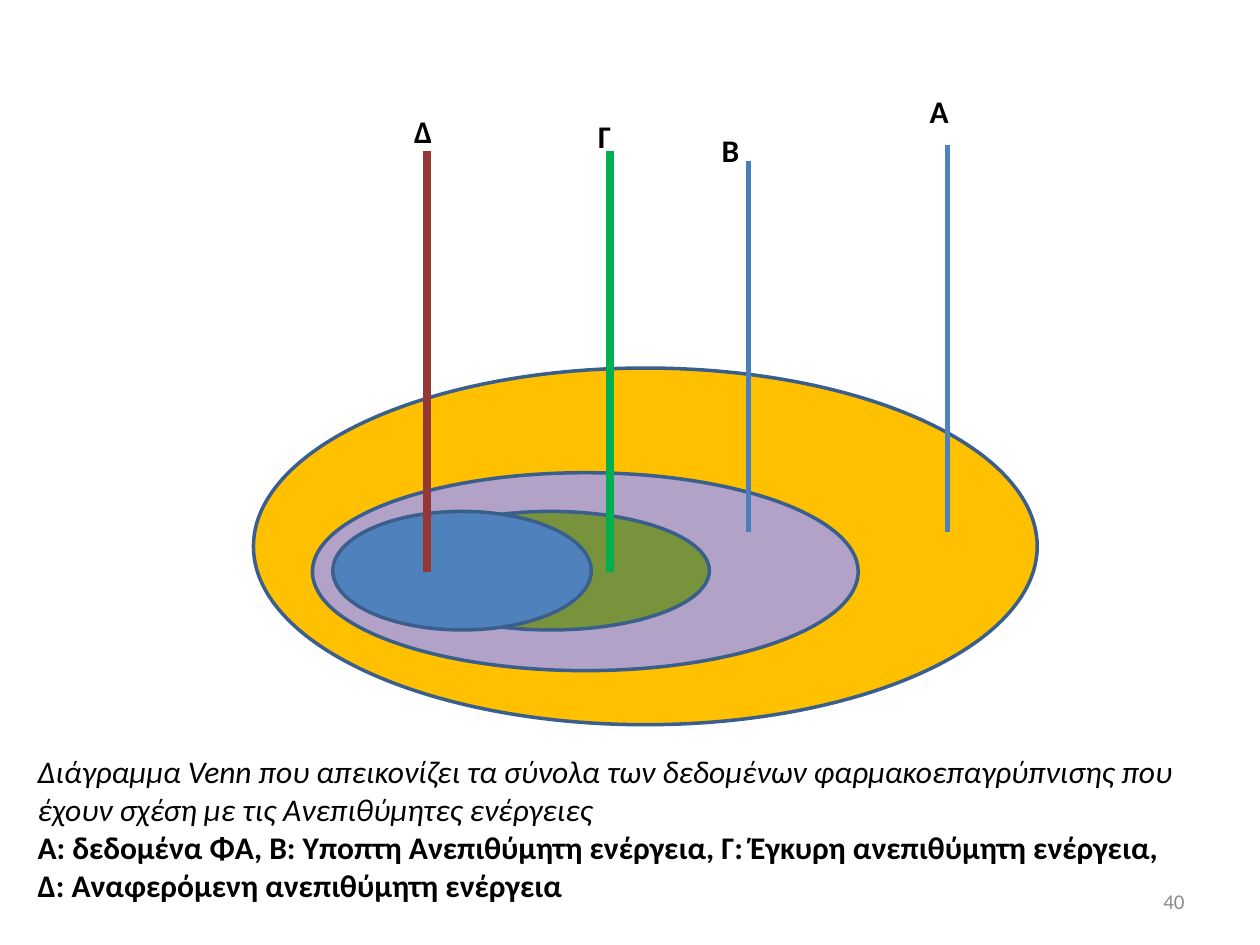
from lxml import etree
from pptx import Presentation
from pptx import util as u
from pptx.dml.color import RGBColor
from pptx.enum import shapes, text
from pptx.oxml import ns

OUTLINE = "3A5F8C"


def color(hex_string):
    return RGBColor.from_string(hex_string)


def add_text(slide, paragraphs, left, top, width, height, size=18, fill="000000",
             align=text.PP_ALIGN.LEFT, anchor=text.MSO_ANCHOR.TOP):
    """Add a text box; paragraphs is a list of (wording, bold, italic)."""
    frame = slide.shapes.add_textbox(u.Cm(left), u.Cm(top), u.Cm(width), u.Cm(height)).text_frame
    frame.word_wrap = True
    frame.vertical_anchor = anchor
    for index, (wording, bold, italic) in enumerate(paragraphs):
        paragraph = frame.add_paragraph() if index else frame.paragraphs[0]
        paragraph.alignment = align
        run = paragraph.add_run()
        run.text = wording
        run.font.name = "Calibri"
        run.font.size = u.Pt(size)
        run.font.bold = bold
        run.font.italic = italic
        run.font.color.rgb = color(fill)


presentation = Presentation()
presentation.slide_width = u.Cm(25.4)
presentation.slide_height = u.Cm(19.05)
slide = presentation.slides.add_slide(presentation.slide_layouts[6])

# Slide number
add_text(slide, [("40", False, False)], 18.21, 17.65, 5.92, 1.02, size=12, fill="8C8C8C",
         align=text.PP_ALIGN.RIGHT, anchor=text.MSO_ANCHOR.MIDDLE)

# Nested sets, outermost first: left, top, width, height, fill
ellipses = [
    (5.11, 7.42, 15.8, 7.19, "FFC000"),
    (6.3, 9.53, 11, 3.99, "B3A2C7"),
    (7.9, 10.31, 6.4, 2.39, "77933C"),
    (6.71, 10.31, 5.21, 2.39, "4F81BD"),
]
for left, top, width, height, fill in ellipses:
    ellipse = slide.shapes.add_shape(shapes.MSO_SHAPE.OVAL, u.Cm(left), u.Cm(top),
                                     u.Cm(width), u.Cm(height))
    ellipse.shadow.inherit = False
    ellipse.fill.solid()
    ellipse.fill.fore_color.rgb = color(fill)
    ellipse.line.color.rgb = color(OUTLINE)
    ellipse.line.width = u.Pt(2)

# Pointers: x, top, bottom, color, weight; then label, left, top, width
pointers = [
    (19.1, 2.92, 10.72, "4F81BD", 3, "Α", 18.49, 1.73, 1.4),
    (15.09, 3.25, 10.72, "4B7EBC", 3, "Β", 14.3, 2.51, 1.6),
    (12.29, 3.05, 11.53, "00B050", 4.5, "Γ", 11.81, 2.24, 1.09),
    (8.61, 3.05, 11.53, "953735", 4.5, "Δ", 8.1, 2.13, 1.6),
]
for x, top, bottom, stroke, weight, label, label_left, label_top, label_width in pointers:
    pointer = slide.shapes.add_connector(shapes.MSO_CONNECTOR.STRAIGHT, u.Cm(x), u.Cm(top),
                                         u.Cm(x), u.Cm(bottom))
    pointer.line.color.rgb = color(stroke)
    pointer.line.width = u.Pt(weight)
    etree.SubElement(pointer.element.spPr, ns.qn("a:effectLst"))
    add_text(slide, [(label, True, False)], label_left, label_top, label_width, 1.02)

# Caption and key
add_text(slide, [
    ("Διάγραμμα Venn που απεικονίζει τα σύνολα των δεδομένων φαρμακοεπαγρύπνισης που "
     "έχουν σχέση με τις Ανεπιθύμητες ενέργειες", False, True),
    ("Α: δεδομένα ΦΑ, Β: Yποπτη Ανεπιθύμητη ενέργεια, Γ: Έγκυρη ανεπιθύμητη ενέργεια, "
     "Δ: Αναφερόμενη ανεπιθύμητη ενέργεια", True, False),
], 0.51, 15.04, 23.39, 3.33)

presentation.save("out.pptx")
